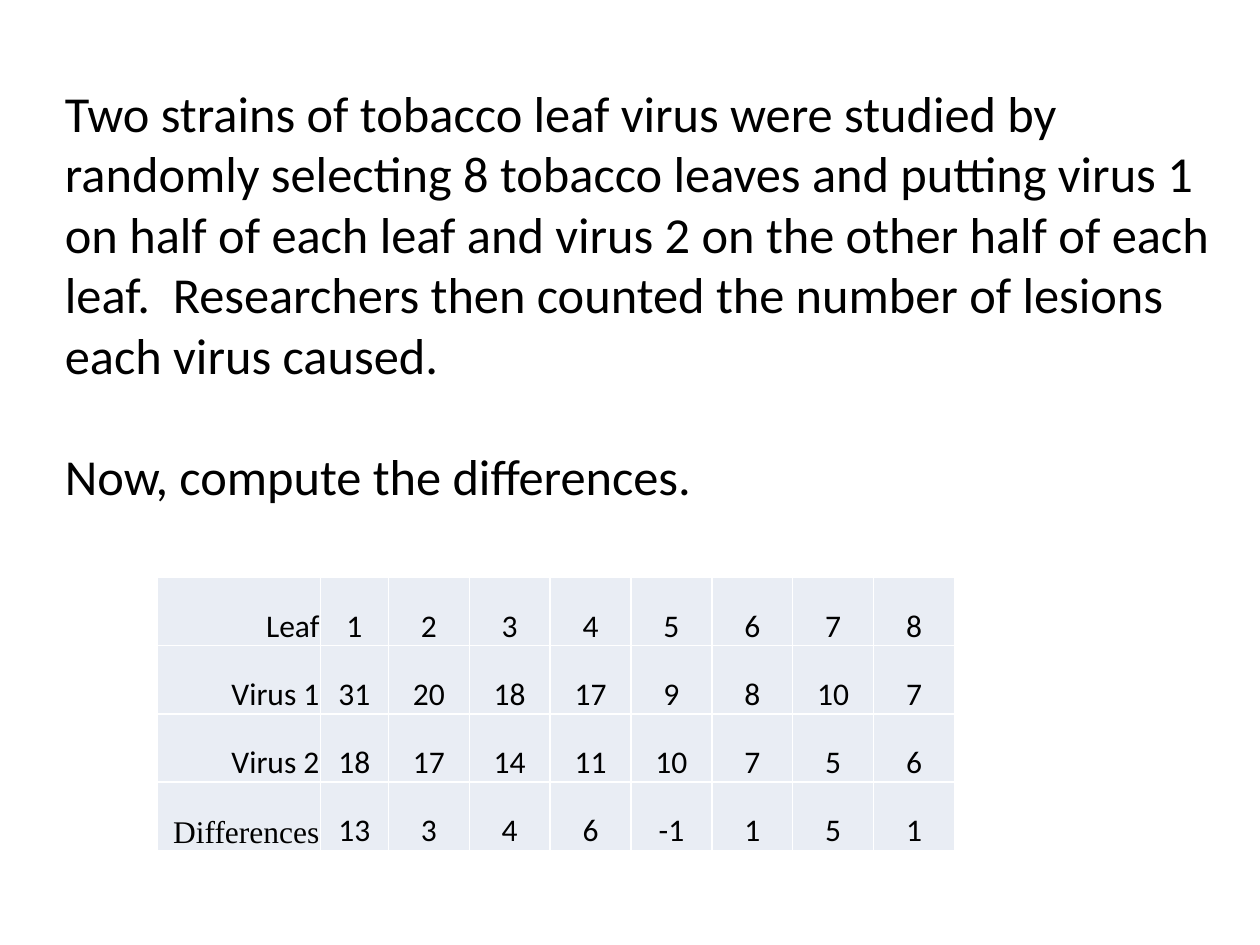
from lxml import etree
from pptx import Presentation
from pptx import util as u
from pptx.dml import color
from pptx.enum import text
from pptx.oxml import ns

# Content
PARAGRAPHS = [
    "Two strains of tobacco leaf virus were studied by randomly selecting 8 tobacco leaves "
    "and putting virus 1 on half of each leaf and virus 2 on the other half of each leaf.  "
    "Researchers then counted the number of lesions each virus caused.",
    "Now, compute the differences.",
]
VIRUS_1 = [31, 20, 18, 17, 9, 8, 10, 7]
VIRUS_2 = [18, 17, 14, 11, 10, 7, 5, 6]
ROWS = [
    ("Leaf", range(1, 9), "Calibri"),
    ("Virus 1", VIRUS_1, "Calibri"),
    ("Virus 2", VIRUS_2, "Calibri"),
    ("Differences", [a - b for a, b in zip(VIRUS_1, VIRUS_2)], "Times New Roman"),
]
COLUMN_WIDTHS = [3.28, 1.37] + [1.63] * 7
ROW_HEIGHT = 1.375
INK, CELL_FILL, BORDER = "000000", "E9EDF4", "FFFFFF"


def rgb(value):
    return color.RGBColor.from_string(value)


def style(paragraph, size, font="Calibri", align=text.PP_ALIGN.LEFT):
    paragraph.alignment = align
    paragraph.font.size = u.Pt(size)
    paragraph.font.name = font
    paragraph.font.color.rgb = rgb(INK)


def add_borders(cell):
    properties = cell._tc.get_or_add_tcPr()
    for index, side in enumerate(("lnL", "lnR", "lnT", "lnB")):
        line = etree.Element(ns.qn(f"a:{side}"), w=str(u.Pt(1)))
        fill = etree.SubElement(line, ns.qn("a:solidFill"))
        etree.SubElement(fill, ns.qn("a:srgbClr"), val=BORDER)
        properties.insert(index, line)


def fill_cell(cell, value, font, align):
    cell.text = str(value)
    style(cell.text_frame.paragraphs[0], 18, font, align)
    cell.vertical_anchor = text.MSO_ANCHOR.BOTTOM
    cell.margin_left = cell.margin_right = cell.margin_top = u.Cm(0.02)
    cell.margin_bottom = 0
    cell.fill.solid()
    cell.fill.fore_color.rgb = rgb(CELL_FILL)
    add_borders(cell)


presentation = Presentation()
presentation.slide_width, presentation.slide_height = u.Cm(25.4), u.Cm(19.05)
slide = presentation.slides.add_slide(presentation.slide_layouts[6])

# Problem statement
statement = slide.shapes.add_textbox(u.Cm(1.06), u.Cm(1.69), u.Cm(23.92), u.Cm(8.47))
frame = statement.text_frame
frame.word_wrap = True
frame.vertical_anchor = text.MSO_ANCHOR.MIDDLE
frame.text = "\n".join(PARAGRAPHS)
for paragraph in frame.paragraphs:
    style(paragraph, 28.8)
frame.paragraphs[1].space_before = u.Pt(35)

# Lesion counts
table = slide.shapes.add_table(
    len(ROWS), len(COLUMN_WIDTHS), u.Cm(3.18), u.Cm(11.64),
    u.Cm(sum(COLUMN_WIDTHS)), u.Cm(ROW_HEIGHT * len(ROWS))).table
for column, width in zip(table.columns, COLUMN_WIDTHS):
    column.width = u.Cm(width)
for r, (label, counts, label_font) in enumerate(ROWS):
    table.rows[r].height = u.Cm(ROW_HEIGHT)
    fill_cell(table.cell(r, 0), label, label_font, text.PP_ALIGN.RIGHT)
    for c, count in enumerate(counts, 1):
        fill_cell(table.cell(r, c), count, "Calibri", text.PP_ALIGN.CENTER)

presentation.save("out.pptx")
